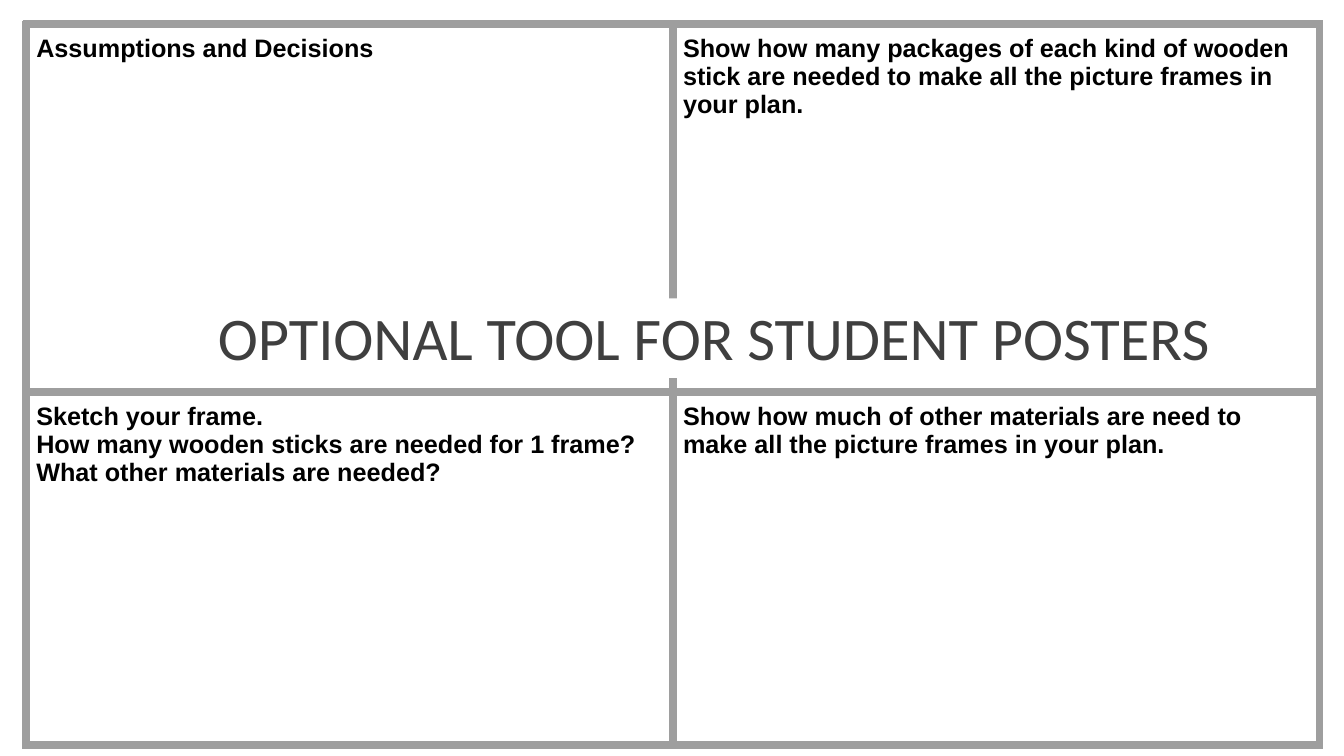
from lxml import etree
from pptx import Presentation
from pptx.dml.color import RGBColor
from pptx.enum.text import MSO_ANCHOR, MSO_AUTO_SIZE, PP_ALIGN
from pptx.oxml.ns import qn
from pptx.util import Inches, Pt

BOTTOM = MSO_ANCHOR.BOTTOM
LEFT = PP_ALIGN.LEFT
NO_FIT = MSO_AUTO_SIZE.NONE


def paint(fill, color):
    fill.solid()
    fill.fore_color.rgb = RGBColor.from_string(color)


def frame(cell, color, width):
    """Draw a solid border on all four sides of a cell."""
    props = cell._tc.get_or_add_tcPr()
    for side in ("lnL", "lnR", "lnT", "lnB"):
        line = etree.SubElement(props, qn(f"a:{side}"), w=str(Pt(width)))
        solid = etree.SubElement(line, qn("a:solidFill"))
        etree.SubElement(solid, qn("a:srgbClr"), val=color)


prompts = [
    ["Assumptions and Decisions",
     "Show how many packages of each kind of wooden stick are needed "
     "to make all the picture frames in your plan."],
    ["Sketch your frame.\nHow many wooden sticks are needed for 1 frame?\n"
     "What other materials are needed?",
     "Show how much of other materials are need to make all the picture "
     "frames in your plan."],
]
heights = [3.65, 3.5]

prs = Presentation()
prs.slide_width, prs.slide_height = Inches(13.33), Inches(7.5)
slide = prs.slides.add_slide(prs.slide_layouts[5])

# Poster grid
grid = slide.shapes.add_table(2, 2, Inches(0.26), Inches(0.24),
                              Inches(12.83), Inches(sum(heights))).table
grid.first_row = grid.horz_banding = False
for row, height, texts in zip(grid.rows, heights, prompts):
    row.height = Inches(height)
    for cell, text in zip(row.cells, texts):
        frame(cell, "9E9E9E", 6)
        paint(cell.fill, "FFFFFF")
        cell.margin_left = cell.margin_right = Inches(0.1)
        cell.margin_top = cell.margin_bottom = Inches(0.1)
        cell.text = text
        for para in cell.text_frame.paragraphs:
            para.font.name, para.font.size = "Arial", Pt(18)
            para.font.bold = True
            paint(para.font.fill, "000000")

# Title band, in front of the grid
title = slide.shapes.title
title.element.getparent().append(title.element)
title.left, title.top = Inches(2.06), Inches(2.96)
title.width, title.height = Inches(10.31), Inches(0.79)
paint(title.fill, "FFFFFF")
body = title.text_frame
body.text = "OPTIONAL TOOL FOR STUDENT POSTERS"
body.auto_size = NO_FIT
body.word_wrap = True
body.vertical_anchor = BOTTOM
body.margin_left = body.margin_right = Inches(0.1)
body.margin_top = body.margin_bottom = Inches(0.05)
head = body.paragraphs[0]
head.alignment = LEFT
head.line_spacing = 0.85
head.font.name, head.font.size = "Calibri", Pt(43.2)
paint(head.font.fill, "3F3F3F")

prs.save("out.pptx")
